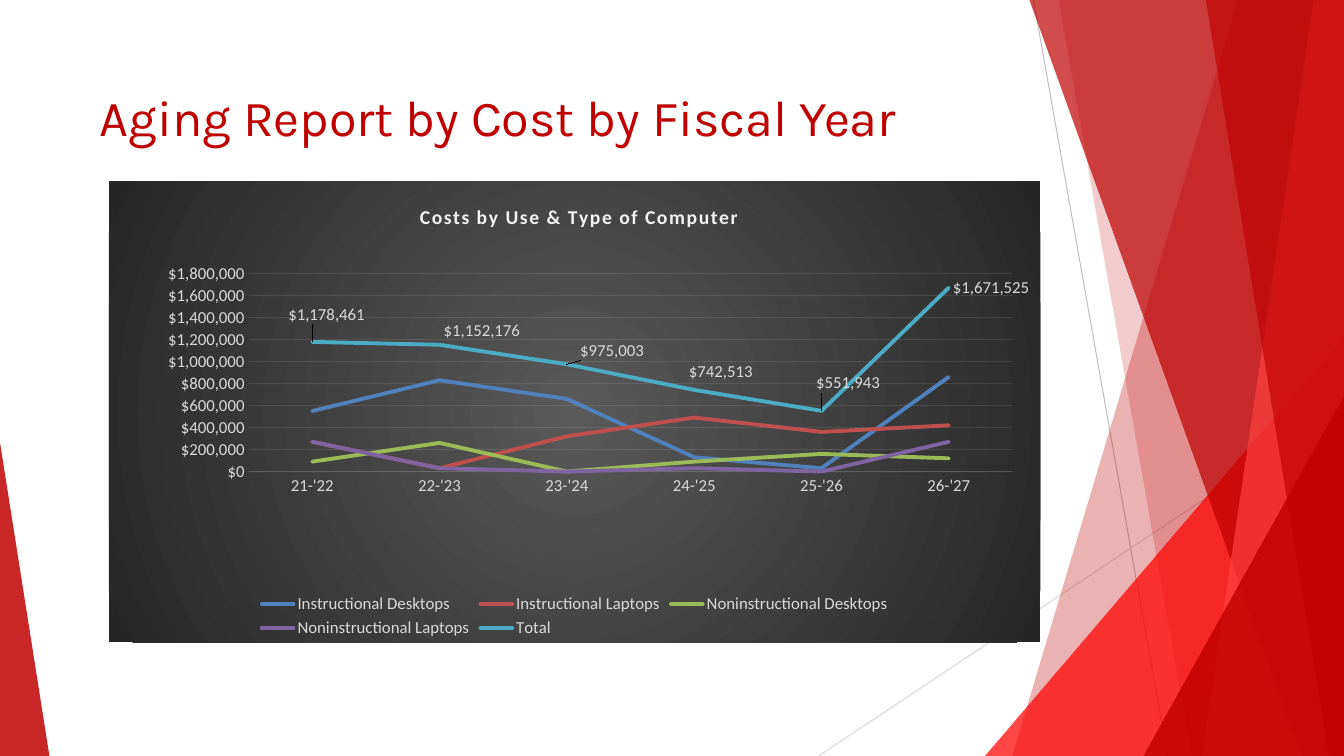
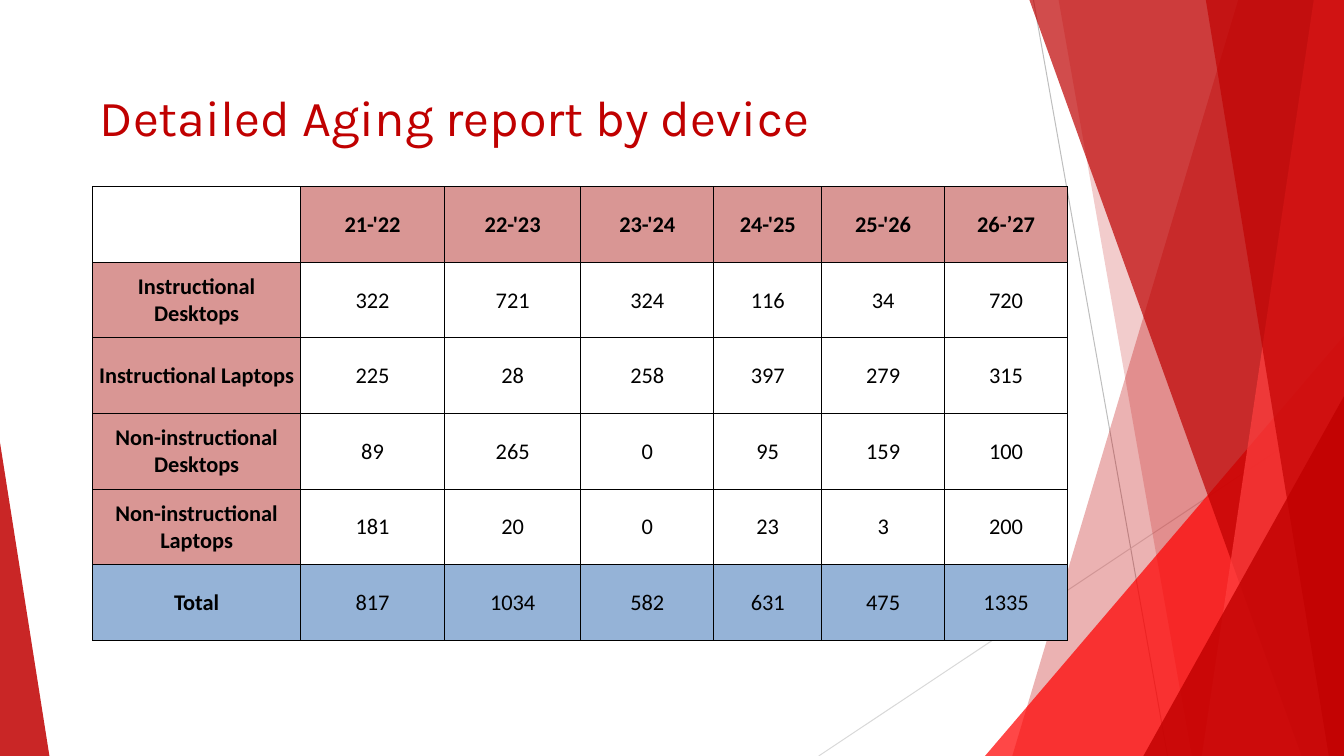
import pptx
import pptx.chart.data
import pptx.dml.color
import pptx.enum.chart
import pptx.enum.text
import pptx.oxml
import pptx.oxml.ns
import pptx.util
from lxml import etree

Inches, Pt = pptx.util.Inches, pptx.util.Pt
WIDTH, HEIGHT = 13.33, 7.5
RED, BLACK, PALE, GRID = "C00000", "000000", "D9D9D9", "F2F2F2"
ROSE, BLUE = "D99694", "95B3D7"
TITLE_FONT, BODY_FONT = "Karla", "Calibri"
DOLLARS = '"$"#,##0'

# Shared artwork: lines (from, to, colour) and facets (points, colour, opacity)
RAYS = [((10.25, 0), (11.58, HEIGHT), "BEBEBE"),
        ((WIDTH, 4.03), (8.12, HEIGHT), PALE)]
RIGHT_FACETS = [  # top-left point, bottom-left x, colour, opacity
    ((12.28, 0), 10.04, RED, 30),
    ((10.5, 0), 11.82, RED, 20),
    ((WIDTH, 3.33), 9.77, "FF0000", 72),
    ((10.21, 0), 12.91, "BE0000", 70),
    ((13.03, 0), 11.92, "FF4040", 70),
    ((11.96, 0), 13.18, RED, 65),
    ((WIDTH, 3.93), 11.34, RED, 80),
]
FACETS = [([(WIDTH, top[1]), top, (foot, HEIGHT), (WIDTH, HEIGHT)], color, opacity)
          for top, foot, color, opacity in RIGHT_FACETS]
FACETS.append(([(0, 4.39), (0, HEIGHT), (0.49, HEIGHT)], RED, 85))

# Cost chart
COST_TITLE = "Costs by Use & Type of Computer"
COST_YEARS = ["21-'22", "22-'23", "23-'24", "24-'25", "25-'26", "26-'27"]
COSTS = [
    ("Instructional Desktops", "4F81BD", [550000, 830000, 660000, 130000, 30000, 860000]),
    ("Instructional Laptops", "C0504D", [270000, 30000, 320000, 490000, 360000, 420000]),
    ("Noninstructional Desktops", "9BBB59", [90000, 260000, 0, 90000, 160000, 120000]),
    ("Noninstructional Laptops", "8064A2", [270000, 30000, 0, 30000, 0, 270000]),
    ("Total", "4BACC6", [1178461, 1152176, 975003, 742513, 551943, 1671525]),
]
# Shift of each total's label, as shares of the chart's size
LABEL_SHIFTS = [(-0.03, -0.06), (0, -0.03), (0.01, -0.03), (-0.01, -0.04), (-0.01, -0.06)]

# Device table
DEVICE_ROWS = [
    ["", "21-'22", "22-'23", "23-'24", "24-'25", "25-'26", "26-’27"],
    ["Instructional Desktops", "322", "721", "324", "116", "34", "720"],
    ["Instructional Laptops", "225", "28", "258", "397", "279", "315"],
    ["Non-instructional Desktops", "89", "265", "0", "95", "159", "100"],
    ["Non-instructional Laptops", "181", "20", "0", "23", "3", "200"],
    ["Total", "817", "1034", "582", "631", "475", "1335"],
]
DEVICE_COLUMNS = [2.06, 1.43, 1.35, 1.32, 1.07, 1.22, 1.22]
DEVICE_ROW_HEIGHT = 0.75


def rgb(color):
    return pptx.dml.color.RGBColor.from_string(color)


def xml(text):
    return pptx.oxml.parse_xml(text.replace(">", " " + pptx.oxml.ns.nsdecls("a", "c") + ">", 1))


def paint(fill, color, opacity=100):
    fill.solid()
    fill.fore_color.rgb = rgb(color)
    if opacity < 100:
        for node in fill._xPr.iter(pptx.oxml.ns.qn("a:srgbClr")):
            etree.SubElement(node, pptx.oxml.ns.qn("a:alpha"), val=str(opacity * 1000))


def stroke(line, color, width, opacity=100):
    paint(line.fill, color, opacity)
    line.width = Pt(width)


def style(font, size, color, name=BODY_FONT, bold=False):
    font.size, font.name, font.bold = Pt(size), name, bold
    font.color.rgb = rgb(color)


def manual_layout(inner="", **shares):
    places = "".join(f'<c:{key} val="{value}"/>' for key, value in shares.items())
    return xml(f"<c:layout><c:manualLayout>{inner}{places}</c:manualLayout></c:layout>")


def add_page(deck, title):
    """Blank page with the red facets and a title."""
    page = deck.slides.add_slide(deck.slide_layouts[6])
    for start, end, color in RAYS:
        ray = page.shapes.add_connector(
            pptx.enum.shapes.MSO_CONNECTOR.STRAIGHT, *map(Inches, start + end))
        stroke(ray.line, color, 0.72)
        etree.SubElement(ray._element.spPr, pptx.oxml.ns.qn("a:effectLst"))
    for points, color, opacity in FACETS:
        corners = [(Inches(x), Inches(y)) for x, y in points]
        builder = page.shapes.build_freeform(*corners[0])
        builder.add_line_segments(corners[1:], close=True)
        facet = builder.convert_to_shape()
        facet.shadow.inherit = False
        facet.line.fill.background()
        paint(facet.fill, color, opacity)

    box = page.shapes.add_textbox(*map(Inches, (0.99, 0.85, 11.35, 0.63)))
    frame = box.text_frame
    frame.word_wrap = True
    frame.margin_left = frame.margin_right = frame.margin_top = frame.margin_bottom = 0
    span = frame.paragraphs[0].add_run()
    span.text = title
    style(span.font, 36, RED, TITLE_FONT)
    return page


def style_axes(chart):
    years, dollars = chart.category_axis, chart.value_axis
    for axis in (years, dollars):
        axis.major_tick_mark = axis.minor_tick_mark = pptx.enum.chart.XL_TICK_MARK.NONE
        style(axis.tick_labels.font, 12, PALE)
    stroke(years.format.line, GRID, 0.75, 10)
    dollars.format.line.fill.background()
    stroke(dollars.major_gridlines.format.line, GRID, 0.75, 10)
    dollars.minimum_scale, dollars.maximum_scale, dollars.major_unit = 0, 1800000, 200000
    dollars.tick_labels.number_format = DOLLARS
    dollars.tick_labels.number_format_is_linked = False


def label_totals(totals):
    right = pptx.enum.chart.XL_LABEL_POSITION.RIGHT
    labels = totals.data_labels
    labels.show_value = True
    labels.number_format, labels.number_format_is_linked = DOLLARS, False
    labels.position = right
    style(labels.font, 12, PALE)
    for index, (x, y) in enumerate(LABEL_SHIFTS):
        label = totals.points[index].data_label
        style(label.font, 12, PALE)
        label.position = right
        node = labels._element.find(f"c:dLbl[{index + 1}]/c:idx", labels._element.nsmap)
        node.addnext(manual_layout(x=x, y=y))


def add_cost_chart(page):
    data = pptx.chart.data.CategoryChartData(number_format=DOLLARS)
    data.categories = COST_YEARS
    for name, _, values in COSTS:
        data.add_series(name, values)
    chart = page.shapes.add_chart(
        pptx.enum.chart.XL_CHART_TYPE.LINE,
        *map(Inches, (1.08, 1.8, 9.24, 4.57)), data).chart
    style(chart.font, 12, BLACK)

    # Title, legend and plot area
    chart.has_title = True
    span = chart.chart_title.text_frame.paragraphs[0].add_run()
    span.text = COST_TITLE
    style(span.font, 14, GRID, bold=True)
    span.font._element.set("spc", "100")
    chart.chart_title._element.get_or_add_tx().addnext(manual_layout(
        '<c:xMode val="edge"/><c:yMode val="edge"/>', x=0.33, y=0.04))
    for old in chart.chart_title._element.findall(pptx.oxml.ns.qn("c:layout"))[1:]:
        chart.chart_title._element.remove(old)
    chart.has_legend = True
    chart.legend.position = pptx.enum.chart.XL_LEGEND_POSITION.BOTTOM
    chart.legend.include_in_layout = False
    style(chart.legend.font, 12, PALE)
    plot_area = chart._chartSpace.chart.plotArea
    for old in plot_area.findall(pptx.oxml.ns.qn("c:layout")):
        plot_area.remove(old)
    plot_area.insert(0, manual_layout(
        '<c:layoutTarget val="inner"/><c:xMode val="edge"/><c:yMode val="edge"/>',
        x=0.15, y=0.2, w=0.82, h=0.43))

    # Dark radial background
    chart._chartSpace.chart.addnext(xml(
        '<c:spPr><a:gradFill><a:gsLst>'
        '<a:gs pos="0"><a:srgbClr val="595959"/></a:gs>'
        '<a:gs pos="100000"><a:srgbClr val="262626"/></a:gs></a:gsLst>'
        '<a:path path="circle"><a:fillToRect l="50000" t="50000" r="50000" b="50000"/></a:path>'
        '</a:gradFill><a:ln><a:noFill/></a:ln></c:spPr>'))

    style_axes(chart)
    plot = chart.plots[0]
    plot.vary_by_categories = False
    for series, (_, color, _) in zip(plot.series, COSTS):
        series.smooth = False
        stroke(series.format.line, color, 2.75)
        series.format.line.fill._xPr.set("cap", "rnd")
    label_totals(plot.series[len(COSTS) - 1])


def add_borders(cell):
    properties = cell._tc.get_or_add_tcPr()
    for place, side in enumerate("LRTB"):
        properties.insert(place, xml(
            f'<a:ln{side} w="6350"><a:solidFill><a:srgbClr val="{BLACK}"/></a:solidFill>'
            f'</a:ln{side}>'))


def add_device_table(page):
    table = page.shapes.add_table(
        len(DEVICE_ROWS), len(DEVICE_COLUMNS), Inches(0.92), Inches(1.85),
        Inches(sum(DEVICE_COLUMNS)), Inches(DEVICE_ROW_HEIGHT * len(DEVICE_ROWS))).table
    table.first_row = table.horz_banding = False
    for column, width in zip(table.columns, DEVICE_COLUMNS):
        column.width = Inches(width)
    for row, texts in enumerate(DEVICE_ROWS):
        table.rows[row].height = Inches(DEVICE_ROW_HEIGHT)
        for column, text in enumerate(texts):
            cell = table.cell(row, column)
            heading = row == 0 or column == 0
            if row == len(DEVICE_ROWS) - 1:
                paint(cell.fill, BLUE)
            elif heading and text:
                paint(cell.fill, ROSE)
            else:
                cell.fill.background()
            add_borders(cell)
            cell.vertical_anchor = pptx.enum.text.MSO_ANCHOR.MIDDLE
            cell.margin_left = cell.margin_right = cell.margin_top = Inches(0.01)
            cell.margin_bottom = 0
            if text:
                para = cell.text_frame.paragraphs[0]
                para.alignment = pptx.enum.text.PP_ALIGN.CENTER
                span = para.add_run()
                span.text = text
                style(span.font, 16, BLACK, bold=heading)


def main():
    deck = pptx.Presentation()
    deck.slide_width, deck.slide_height = Inches(WIDTH), Inches(HEIGHT)
    add_cost_chart(add_page(deck, "Aging Report by Cost by Fiscal Year"))
    add_device_table(add_page(deck, "Detailed Aging report by device"))
    deck.save("out.pptx")


if __name__ == "__main__":
    main()
